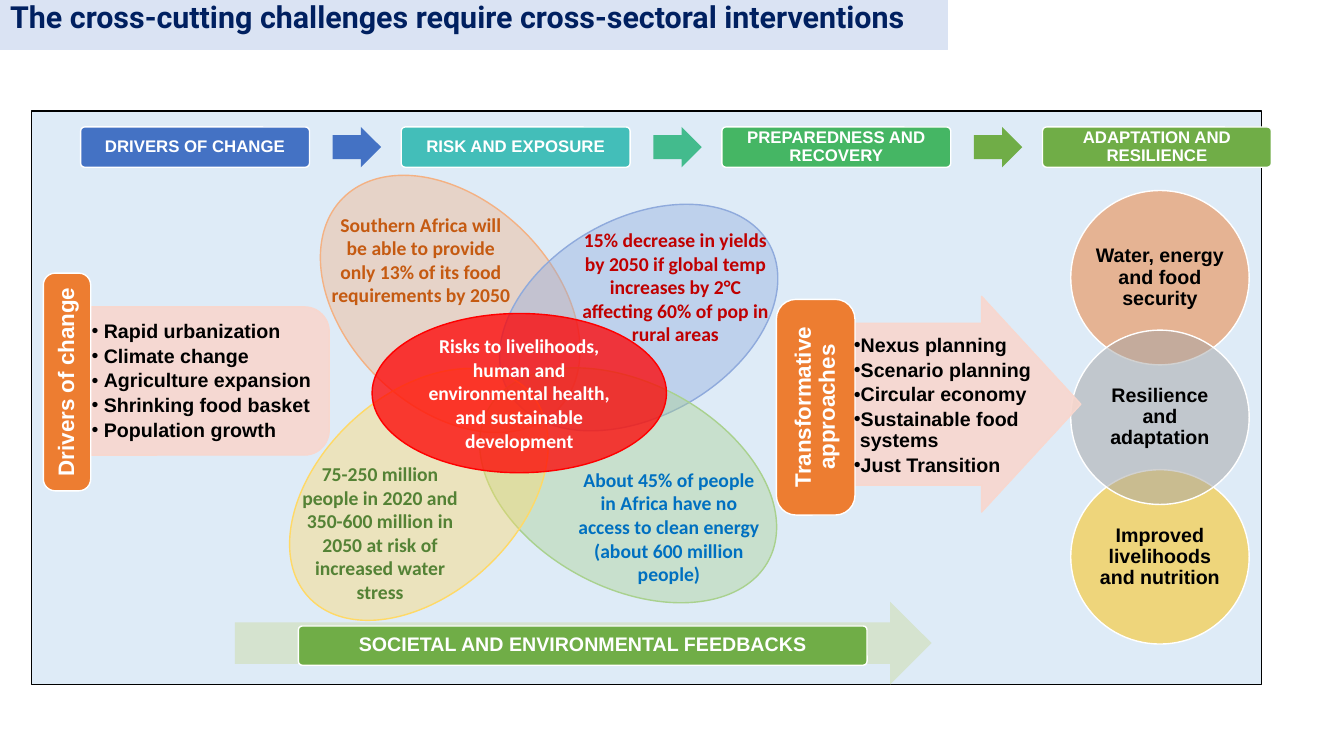
from dataclasses import dataclass

from lxml.etree import SubElement
from pptx import Presentation
from pptx.dml.color import RGBColor
from pptx.enum.shapes import MSO_SHAPE
from pptx.enum.text import MSO_ANCHOR, PP_ALIGN
from pptx.oxml.ns import qn
from pptx.util import Inches, Pt


@dataclass(frozen=True)
class Theme:
    white: str = "FFFFFF"
    black: str = "000000"
    navy: str = "002060"
    title_band: str = "DAE3F3"
    panel: str = "DEEBF7"
    orange: str = "ED7D31"
    gold: str = "FFC000"
    grey: str = "A5A5A5"
    pink: str = "F8D7CE"
    blue: str = "4472C4"
    teal: str = "43BEB9"
    sea_green: str = "43BB8D"
    emerald: str = "45B664"
    green: str = "70AD47"
    pale_green: str = "D5E3CF"
    red: str = "FF0000"
    petal_orange: str = "F4B183"
    petal_blue: str = "8FAADC"
    petal_green: str = "A9D18E"
    petal_yellow: str = "FFD966"
    food_text: str = "C55A11"
    energy_text: str = "0070C0"
    water_text: str = "548235"
    yield_text: str = "C00000"
    title_font: str = "Roboto"
    main_font: str = "Arial"
    risk_font: str = "Calibri"
    title_size: float = 21.7
    tab_size: int = 16
    body_size: int = 14
    stage_size: int = 12


THEME = Theme()

DRIVERS = ["Rapid urbanization", "Climate change", "Agriculture expansion",
           "Shrinking food basket", "Population growth"]
APPROACHES = ["Nexus planning", "Scenario planning", "Circular economy",
              "Sustainable food systems", "Just Transition"]
# Stage name, box colour, colour of the arrow that follows
STAGES = [("DRIVERS OF CHANGE", THEME.blue, THEME.blue),
          ("RISK AND EXPOSURE", THEME.teal, THEME.sea_green),
          ("PREPAREDNESS AND RECOVERY", THEME.emerald, THEME.green),
          ("ADAPTATION AND RESILIENCE", THEME.green, None)]
# Outcome, colour, row from the top; the middle one lies over the others
OUTCOMES = [("Water, energy and food security", THEME.orange, 0),
            ("Improved livelihoods and nutrition", THEME.gold, 2),
            ("Resilience and adaptation", THEME.grey, 1)]
# Place, rotation, colour
PETALS = [((2.97, 1.99, 2.99, 2.05), 44.3, THEME.petal_orange),
          ((4.85, 2.17, 2.97, 1.96), 330.5, THEME.petal_blue),
          ((4.65, 3.8, 3.16, 2.03), 28.2, THEME.petal_green),
          ((2.66, 3.92, 2.99, 1.97), 316.9, THEME.petal_yellow)]
RISKS = [((3.16, 2.02, 2.03, 1.11), THEME.food_text,
          "Southern Africa will be able to provide only 13% of its food "
          "requirements by 2050"),
         ((5.6, 4.67, 2.07, 1.11), THEME.energy_text,
          "About 45% of people in Africa have no access to clean energy "
          "(about 600 million people)"),
         ((2.81, 4.73, 1.92, 1.11), THEME.water_text,
          "75-250 million people in 2020 and 350-600 million in 2050 at risk "
          "of increased water stress"),
         ((5.67, 2.29, 2.06, 1.11), THEME.yield_text,
          "15% decrease in yields by 2050 if global temp increases by 2°C "
          "affecting 60% of pop in rural areas")]


def set_all(target, values):
    for name, value in values.items():
        setattr(target, name, value)


def paint(shape, fill, line=None, opacity=100, weight=1):
    shape.fill.solid()
    shape.fill.fore_color.rgb = RGBColor.from_string(fill)
    if opacity < 100:
        color = shape.fill._xPr.find(qn("a:solidFill"))[0]
        SubElement(color, qn("a:alpha"), val=str(opacity * 1000))
    if line:
        shape.line.color.rgb = RGBColor.from_string(line)
        shape.line.width = Pt(weight)
    else:
        shape.line.fill.background()


def add_figure(page, kind, place, fill, line=None, opacity=100, adjust=(), turn=0):
    shape = page.shapes.add_shape(kind, *map(Inches, place))
    shape.shadow.inherit = False
    shape.rotation = turn
    for index, value in enumerate(adjust):
        shape.adjustments[index] = value
    paint(shape, fill, line, opacity)
    return shape


def add_bullet(para, indent):
    properties = para._p.get_or_add_pPr()
    properties.set("marL", str(Inches(indent)))
    properties.set("indent", str(-Inches(indent)))
    SubElement(properties, qn("a:buFont"), typeface="Arial")
    SubElement(properties, qn("a:buChar"), char="•")


def write(box, lines, color, size=THEME.body_size, font=THEME.main_font,
          align=PP_ALIGN.CENTER, anchor=MSO_ANCHOR.MIDDLE, spacing=0.9,
          insets=(0.1, 0.05), indent=None):
    """Fill a shape with paragraphs; an indent turns them into bullets."""
    frame = box.text_frame
    across, down = map(Inches, insets)
    set_all(frame, {"word_wrap": True, "vertical_anchor": anchor,
                    "margin_left": across, "margin_right": across,
                    "margin_top": down, "margin_bottom": down})
    for index, line in enumerate(lines):
        para = frame.add_paragraph() if index else frame.paragraphs[0]
        if indent:
            add_bullet(para, indent)
        set_all(para, {"alignment": align, "line_spacing": spacing,
                       "space_after": Pt(2.5 if indent else 0)})
        span = para.add_run()
        span.text = line
        set_all(span.font, {"name": font, "size": Pt(size), "bold": True})
        span.font.color.rgb = RGBColor.from_string(color)


def add_text(page, place, lines, color, **style):
    write(page.shapes.add_textbox(*map(Inches, place)), lines, color, **style)


def add_title(page, text):
    title = page.shapes.title
    set_all(title, {"left": 0, "top": 0, "width": Inches(9.4), "height": Inches(0.49)})
    paint(title, THEME.title_band, THEME.title_band, weight=0.75)
    write(title, [text], THEME.navy, THEME.title_size, THEME.title_font,
          PP_ALIGN.LEFT, MSO_ANCHOR.TOP, spacing=0.8)


def add_side_tab(page, place, text):
    tab = add_figure(page, MSO_SHAPE.ROUNDED_RECTANGLE, place, THEME.orange,
                     THEME.white, adjust=[0.25])
    write(tab, [text], THEME.white, THEME.tab_size, insets=(0.05, 0.05))
    tab.text_frame._txBody.bodyPr.set("vert", "vert270")


def add_banner(page, place, text, fill, size):
    banner = add_figure(page, MSO_SHAPE.ROUNDED_RECTANGLE, place, fill,
                        THEME.white, adjust=[0.1])
    write(banner, [text], THEME.white, size, insets=(0.05, 0.05))


def add_stages(page):
    for column, (name, fill, arrow_fill) in enumerate(STAGES):
        left = 0.8 + 3.18 * column
        add_banner(page, (left, 1.26, 2.27, 0.4), name, fill, THEME.stage_size)
        if arrow_fill:
            add_figure(page, MSO_SHAPE.RIGHT_ARROW, (left + 2.5, 1.26, 0.48, 0.4),
                       arrow_fill, adjust=[0.6, 0.5])


def add_outcomes(page):
    for text, fill, row in OUTCOMES:
        circle = add_figure(page, MSO_SHAPE.OVAL, (10.62, 1.89 + 1.385 * row, 1.77, 1.73),
                            fill, THEME.white, opacity=50)
        write(circle, [text], THEME.black, insets=(-0.02, 0))


def add_risks(page):
    for place, turn, fill in PETALS:
        add_figure(page, MSO_SHAPE.OVAL, place, fill, fill, opacity=40, turn=turn)
    style = {"font": THEME.risk_font, "spacing": 1.0}
    for place, color, text in RISKS:
        add_text(page, place, [text], color, **style)
    core = add_figure(page, MSO_SHAPE.OVAL, (3.69, 3.11, 2.92, 1.58),
                      THEME.red, THEME.red, opacity=75)
    write(core, ["Risks to livelihoods, human and environmental health, "
                 "and sustainable development"], THEME.white, **style)


def main():
    deck = Presentation()
    set_all(deck, {"slide_width": Inches(13.33), "slide_height": Inches(7.5)})
    page = deck.slides.add_slide(deck.slide_layouts[5])
    add_title(page, "The cross-cutting challenges require cross-sectoral interventions")
    add_figure(page, MSO_SHAPE.RECTANGLE, (0.31, 1.1, 12.2, 5.69), THEME.panel, THEME.black)

    add_figure(page, MSO_SHAPE.ROUND_2_SAME_RECTANGLE, (1.33, 2.58, 1.47, 2.4),
               THEME.pink, THEME.pink, opacity=90, turn=90)
    add_text(page, (0.86, 3.05, 2.4, 1.47), DRIVERS, THEME.black,
             align=PP_ALIGN.LEFT, insets=(0.05, 0.05), indent=0.12)
    add_side_tab(page, (0.43, 2.71, 0.47, 2.16), "Drivers of change")

    add_outcomes(page)
    add_figure(page, MSO_SHAPE.RIGHT_ARROW, (8.44, 2.94, 2.28, 2.14),
               THEME.pink, THEME.pink, opacity=90, adjust=[0.75, 0.46])
    add_side_tab(page, (7.7, 2.97, 0.78, 2.14), "Transformative approaches")
    add_text(page, (8.37, 3.28, 2.25, 1.51), APPROACHES, THEME.black,
             align=PP_ALIGN.LEFT, anchor=MSO_ANCHOR.TOP, indent=0.06)

    add_stages(page)
    add_figure(page, MSO_SHAPE.RIGHT_ARROW, (2.33, 5.97, 6.91, 0.82), THEME.pale_green)
    add_banner(page, (2.96, 6.21, 5.64, 0.39), "SOCIETAL AND ENVIRONMENTAL FEEDBACKS",
               THEME.green, THEME.body_size)
    add_risks(page)
    deck.save("out.pptx")


if __name__ == "__main__":
    main()
